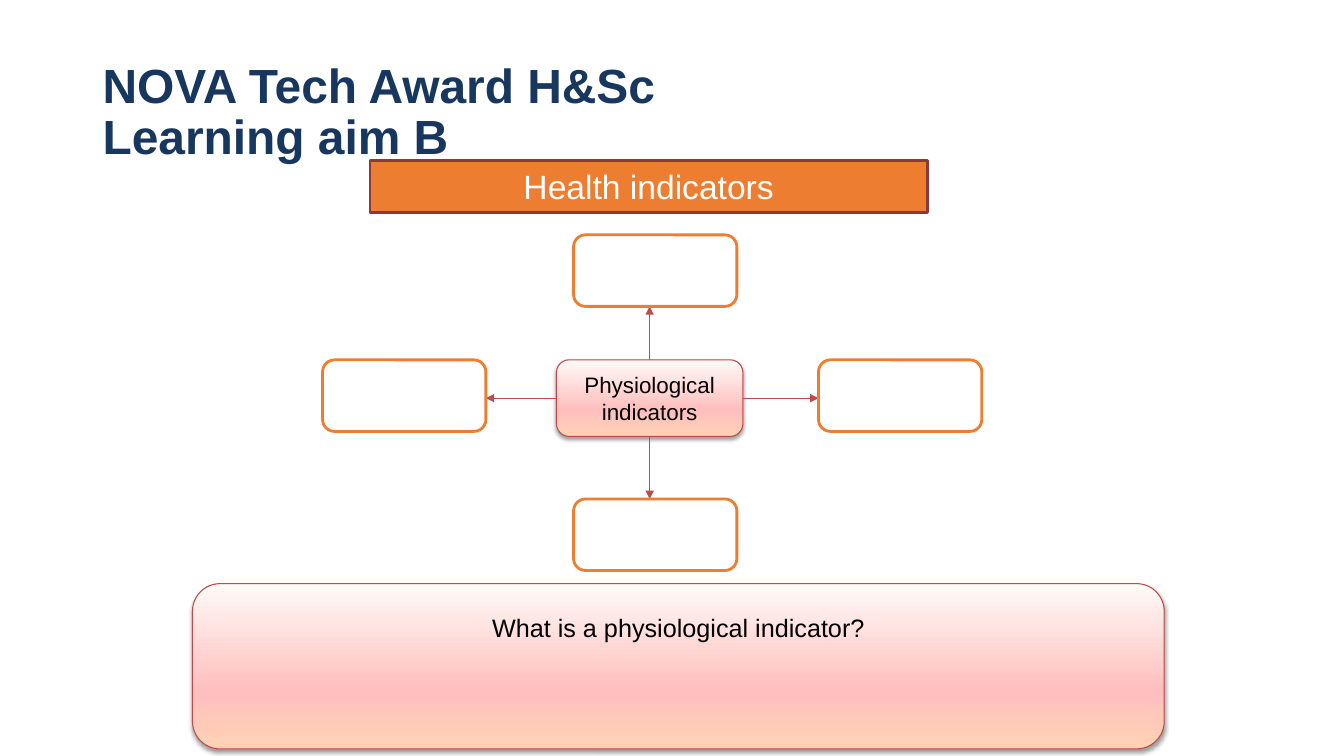
from lxml import etree
from pptx import Presentation
from pptx.dml.color import RGBColor
from pptx.enum.shapes import MSO_CONNECTOR as CONNECTOR, MSO_SHAPE as SHAPE
from pptx.enum.text import MSO_ANCHOR as ANCHOR, PP_ALIGN as ALIGN
from pptx.oxml import parse_xml
from pptx.oxml.ns import nsdecls, qn
from pptx.util import Inches, Pt

# The grid has ten columns and ten rows to the inch
COLS, ROWS = 133.33, 75
FONT = "Arial"
NAVY, ORANGE, MAROON, RED = "17375E", "ED7D31", "8C3A38", "BE4B48"
WHITE, BLACK = "FFFFFF", "000000"
BLUSH = [(0, "FFD2B4"), (35, "FFBFBE"), (100, "FFFAF7")]


def grid(*cells):
    return [Inches(c / 10) for c in cells]


def rgb(color):
    return RGBColor.from_string(color)


def write(sp, text, size, color, align=ALIGN.CENTER, anchor=ANCHOR.MIDDLE,
          bold=False, inset=0.05, top=0.05):
    tf = sp.text_frame
    tf.word_wrap = True
    tf.vertical_anchor = anchor
    tf.margin_left = tf.margin_right = Inches(inset)
    tf.margin_top, tf.margin_bottom = Inches(top), Inches(0.05)
    p = tf.paragraphs[0]
    p.text = text
    p.alignment = align
    for r in p.runs:
        r.font.name, r.font.size, r.font.bold = FONT, Pt(size), bold
        r.font.color.rgb = rgb(color)
    return p


def add_box(slide, kind, area, fill, line, width):
    sp = slide.shapes.add_shape(kind, *grid(*area))
    sp.shadow.inherit = False
    sp.fill.solid()
    sp.fill.fore_color.rgb = rgb(fill)
    sp.line.color.rgb = rgb(line)
    sp.line.width = Pt(width)
    return sp


def add_blush_panel(slide, area):
    sp = add_box(slide, SHAPE.ROUNDED_RECTANGLE, area, WHITE, RED, 0.75)
    props = sp._element.spPr
    # Three-stop gradient running upwards
    stops = "".join(
        f'<a:gs pos="{pos * 1000}"><a:srgbClr val="{color}"/></a:gs>'
        for pos, color in BLUSH)
    props.replace(props.find(qn("a:solidFill")), parse_xml(
        f'<a:gradFill {nsdecls("a")} rotWithShape="1"><a:gsLst>{stops}</a:gsLst>'
        '<a:lin ang="16200000" scaled="0"/></a:gradFill>'))
    # Soft shadow below
    props.find(qn("a:effectLst")).append(parse_xml(
        f'<a:outerShdw {nsdecls("a")} blurRad="{Pt(3)}" dist="{Pt(1.6)}" '
        'dir="5400000" rotWithShape="0"><a:srgbClr val="000000">'
        '<a:alpha val="38000"/></a:srgbClr></a:outerShdw>'))
    return sp


def add_arrow(slide, start, end):
    cxn = slide.shapes.add_connector(CONNECTOR.STRAIGHT, *grid(*start, *end))
    cxn.line.color.rgb = rgb(RED)
    cxn.line.width = Pt(0.75)
    etree.SubElement(cxn.line._get_or_add_ln(), qn("a:tailEnd"), type="triangle")
    etree.SubElement(cxn._element.spPr, qn("a:effectLst"))


def add_indicator_map(slide):
    left, top, width, height = 55.2, 35.7, 18.5, 7.6
    right, bottom = left + width, top + height
    mid_x, mid_y = left + width / 2, top + height / 2
    hub = add_blush_panel(slide, (left, top, width, height))
    write(hub, "Physiological indicators", 16, BLACK)

    # Arrows from the hub's sides to the answer boxes
    box_w, box_h = 16.2, 7.1
    upper, lower, west, east = 23.3, 49.5, 32, 81.2
    for start, end in [
        ((mid_x, top), (mid_x, upper + box_h)),
        ((mid_x, bottom), (mid_x, lower)),
        ((left, mid_y), (west + box_w, mid_y)),
        ((right, mid_y), (east, mid_y)),
    ]:
        add_arrow(slide, start, end)

    # Empty answer boxes
    centre = 56.9
    for x, y in [(centre, upper), (west, top), (centre, lower), (east, top)]:
        add_box(slide, SHAPE.ROUNDED_RECTANGLE, (x, y, box_w, box_h),
                WHITE, ORANGE, 2)


def main():
    prs = Presentation()
    prs.slide_width, prs.slide_height = grid(COLS, ROWS)
    slide = prs.slides.add_slide(prs.slide_layouts[6])

    # Title
    title = slide.shapes.add_textbox(*grid(9.2, 4, 115, 14.5))
    p = write(title, "NOVA Tech Award H&Sc\vLearning aim B", 34.2, NAVY,
              ALIGN.LEFT, bold=True, inset=0.1)
    p.line_spacing = 0.9

    # Topic banner
    banner = add_box(slide, SHAPE.RECTANGLE, (36.7, 15.9, 55.3, 5.2),
                     ORANGE, MAROON, 2)
    write(banner, "Health indicators", 24, WHITE)

    add_indicator_map(slide)

    # Question panel with room for an answer
    panel = add_blush_panel(slide, (19.1, 57.9, 96.4, 16.4))
    write(panel, "What is a physiological indicator?", 18, BLACK,
          anchor=ANCHOR.TOP, top=0.2)

    prs.save("out.pptx")


if __name__ == "__main__":
    main()
